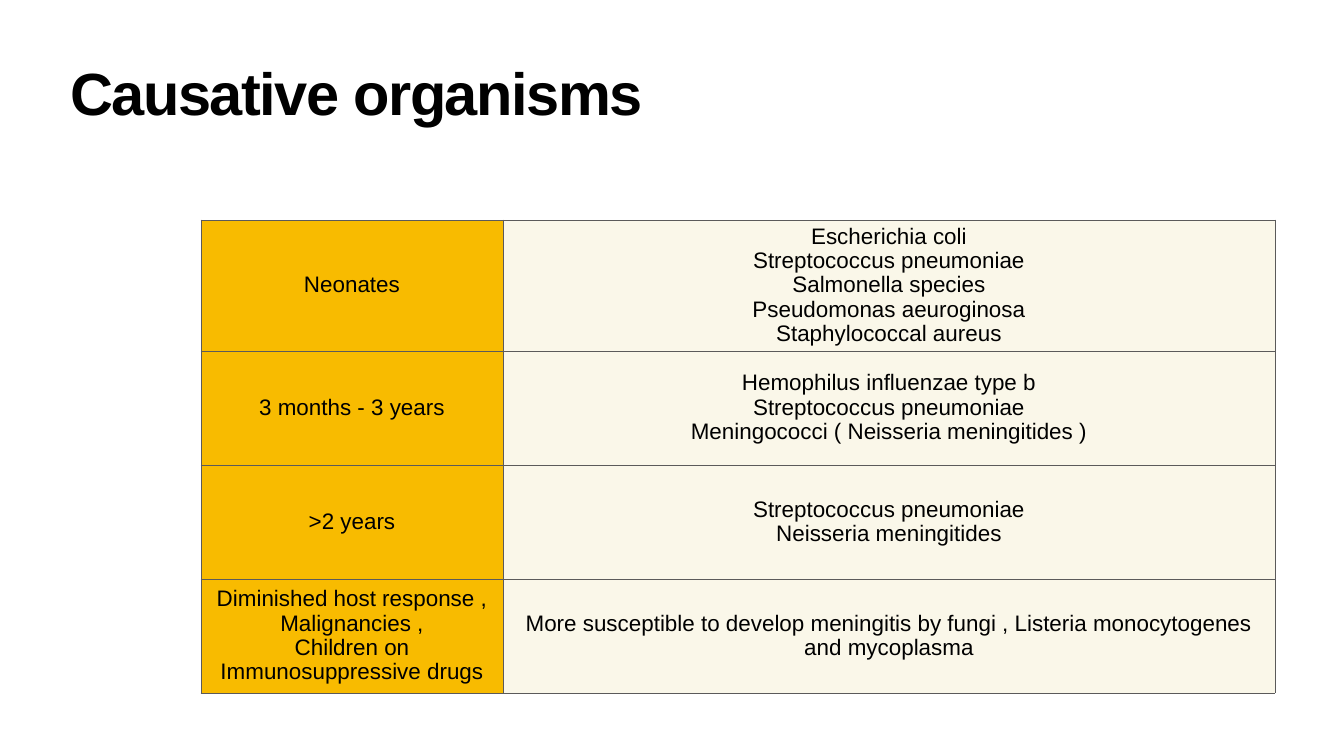
from lxml import etree
from pptx import Presentation
from pptx.dml.color import RGBColor
from pptx.enum.text import MSO_ANCHOR, PP_ALIGN
from pptx.oxml.ns import qn
from pptx.util import Pt

MIDDLE = MSO_ANCHOR.MIDDLE
LEFT, CENTER = PP_ALIGN.LEFT, PP_ALIGN.CENTER

# Content
TITLE = "Causative organisms"
ORGANISMS_BY_GROUP = [
    (["Neonates"],
     ["Escherichia coli", "Streptococcus pneumoniae", "Salmonella species",
      "Pseudomonas aeuroginosa", "Staphylococcal aureus"]),
    (["3 months - 3 years"],
     ["Hemophilus influenzae type b", "Streptococcus pneumoniae",
      "Meningococci ( Neisseria meningitides )"]),
    ([">2 years"],
     ["Streptococcus pneumoniae", "Neisseria meningitides"]),
    (["Diminished host response ,", "Malignancies ,",
      "Children on Immunosuppressive drugs"],
     ["More susceptible to develop meningitis by fungi , "
      "Listeria monocytogenes and mycoplasma"]),
]

# Look and layout, in px
COLORS = {"text": "000000", "group": "F8BB00", "organisms": "FAF7E9",
          "border": "5B5A5A"}
FONT = "Arial"
SLIDE_W, SLIDE_H = 1344, 756
TITLE_BOX = (67, 59, 1211, 79)
TABLE_LEFT, TABLE_TOP = 201, 220
COLUMN_WIDTHS = (302, 772)
FIRST_ROW_H, ROW_H = 131, 114
INSET = 3
EMU_PER_PX = 914400 / 50.4


def px(length):
    return round(length * EMU_PER_PX)


def set_insets(target):
    target.margin_left = target.margin_right = px(INSET)
    target.margin_top = target.margin_bottom = px(INSET)


def format_paragraph(paragraph, size, align, spacing, bold=False):
    paragraph.alignment = align
    paragraph.line_spacing = spacing
    paragraph.space_before = Pt(0)
    font = paragraph.font
    font.name, font.size, font.bold = FONT, Pt(size), bold
    font.color.rgb = RGBColor.from_string(COLORS["text"])


def add_borders(cell):
    properties = cell._tc.get_or_add_tcPr()
    for position, side in enumerate(("lnL", "lnR", "lnT", "lnB")):
        line = etree.Element(qn(f"a:{side}"), w=str(Pt(1)))
        fill = etree.SubElement(line, qn("a:solidFill"))
        etree.SubElement(fill, qn("a:srgbClr"), val=COLORS["border"])
        properties.insert(position, line)


def fill_cell(cell, lines, color):
    cell.text = "\n".join(lines)
    cell.vertical_anchor = MIDDLE
    set_insets(cell)
    cell.fill.solid()
    cell.fill.fore_color.rgb = RGBColor.from_string(color)
    add_borders(cell)
    for paragraph in cell.text_frame.paragraphs:
        format_paragraph(paragraph, 32, CENTER, 0.97)


prs = Presentation()
prs.slide_width, prs.slide_height = px(SLIDE_W), px(SLIDE_H)
slide = prs.slides.add_slide(prs.slide_layouts[5])

# Title
title = slide.shapes.title
title.left, title.top, title.width, title.height = map(px, TITLE_BOX)
title_frame = title.text_frame
title_frame.text = TITLE
title_frame.vertical_anchor = MIDDLE
set_insets(title_frame)
heading = title_frame.paragraphs[0]
format_paragraph(heading, 85, LEFT, 0.8, bold=True)
heading.runs[0].font._element.set("spc", "-200")

# Table of organisms by patient group
row_heights = [FIRST_ROW_H] + [ROW_H] * (len(ORGANISMS_BY_GROUP) - 1)
table = slide.shapes.add_table(
    len(ORGANISMS_BY_GROUP), len(COLUMN_WIDTHS), px(TABLE_LEFT), px(TABLE_TOP),
    px(sum(COLUMN_WIDTHS)), px(sum(row_heights))).table
table.first_row = table.horz_banding = False
for column, width in zip(table.columns, COLUMN_WIDTHS):
    column.width = px(width)
for row, height, (group, organisms) in zip(table.rows, row_heights,
                                           ORGANISMS_BY_GROUP):
    row.height = px(height)
    fill_cell(row.cells[0], group, COLORS["group"])
    fill_cell(row.cells[1], organisms, COLORS["organisms"])

prs.save("out.pptx")
